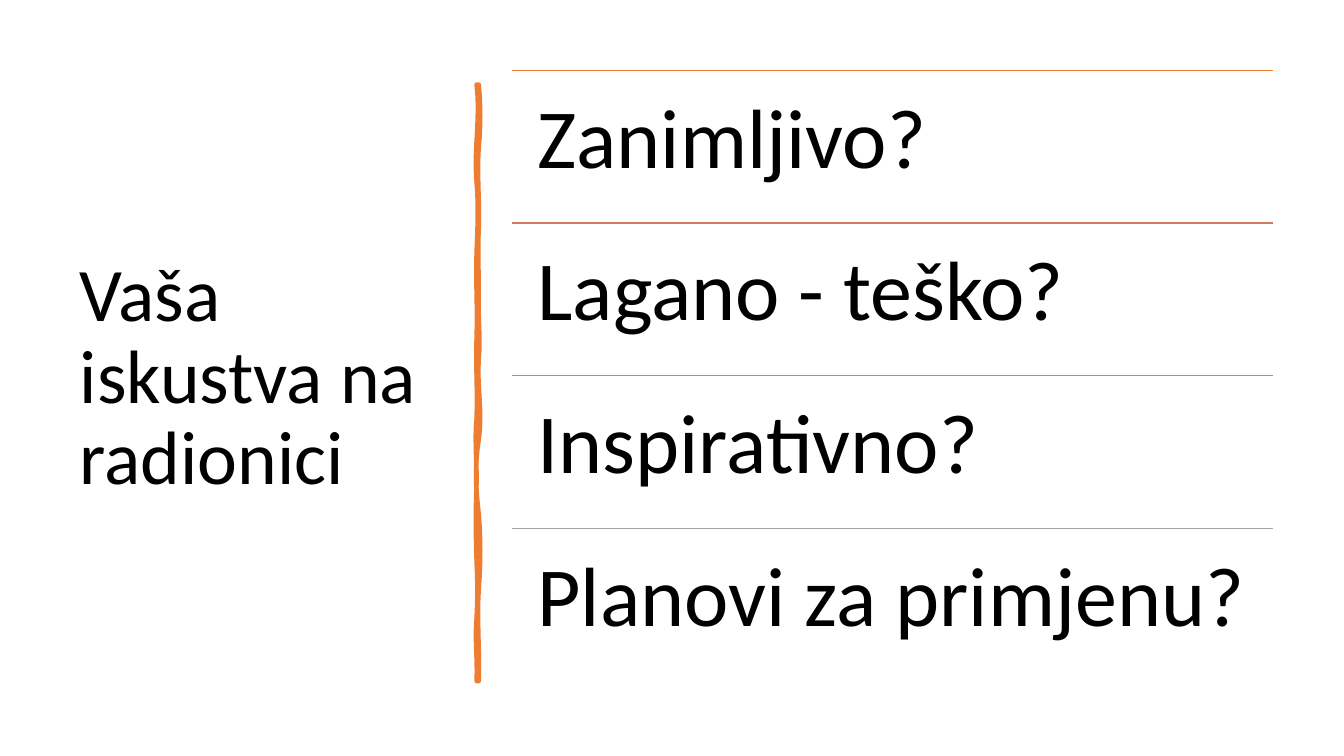
import pptx
import pptx.util
import pptx.dml.color
import pptx.enum.shapes
import pptx.enum.text
import lxml.etree
from pptx.oxml.ns import qn

Pt = pptx.util.Pt
Anchor = pptx.enum.text.MSO_ANCHOR

COLORS = {
    "background": "FFFFFF",
    "text": "000000",
    "ribbon": "ED7D31",
    "rule_1": "ED7D31",
    "rule_2": "D17B5C",
    "rule_3": "B98A82",
    "rule_4": "A5A5A5",
}
QUESTIONS = ["Zanimljivo?", "Lagano - teško?", "Inspirativno?", "Planovi za primjenu?"]

# Ribbon edges: (end of the wave, sway near its start, sway near its end)
RIGHT_EDGE = [(44.6, 1.4, 1.4), (102.2, -1.4, 0.7), (151.2, -0.7, 0), (195.8, -0.7, 1.4),
              (253.4, -1.4, 2.9), (306.7, -2.9, -2.2), (360, 1.4, 1.4), (426, -1.4, 0.7)]
LEFT_EDGE = [(380.9, 0.7, -1.4), (340.6, 0.7, 0.7), (283, -0.7, -0.7), (238.3, 0, -1.4),
             (180.7, 0.7, -0.7), (119.5, 0.7, -0.7), (69.8, 0.7, 1.4), (0, -2.2, 2.9)]


def rgb(name):
    return pptx.dml.color.RGBColor.from_string(COLORS[name])


def add_text(slide, text, box, size, font="Calibri", color="text",
             anchor=Anchor.TOP, inset_x=7.2, inset_y=3.6):
    frame = slide.shapes.add_textbox(*map(Pt, box)).text_frame
    frame.word_wrap = True
    frame.vertical_anchor = anchor
    frame.margin_left = frame.margin_right = Pt(inset_x)
    frame.margin_top = frame.margin_bottom = Pt(inset_y)
    paragraph = frame.paragraphs[0]
    paragraph.line_spacing = 0.9
    run = paragraph.add_run()
    run.text = text
    run.font.name = font
    run.font.size = Pt(size)
    run.font.color.rgb = rgb(color)


def add_rule(slide, left, top, width, color):
    rule = slide.shapes.add_connector(
        pptx.enum.shapes.MSO_CONNECTOR.STRAIGHT, Pt(left), Pt(top), Pt(left + width), Pt(top))
    rule.line.color.rgb = rgb(color)
    rule.line.width = Pt(1)
    lxml.etree.SubElement(rule._element.spPr, qn("a:effectLst"))


def wavy_edge(x, start, waves, steps=8):
    """Points along a vertical edge that sways around x."""
    points = []
    for end, sway_in, sway_out in waves:
        for step in range(1, steps + 1):
            t = step / steps
            sway = 3 * t * (1 - t) * ((1 - t) * sway_in + t * sway_out)
            points.append((x + sway, start + t * (end - start)))
        start = end
    return points


def add_ribbon(slide, box):
    left, top, width, height = box
    outline = wavy_edge(left + width, 0, RIGHT_EDGE)
    outline += [(left, height)] + wavy_edge(left, height, LEFT_EDGE)
    builder = slide.shapes.build_freeform(Pt(left + width), Pt(top))
    builder.add_line_segments([(Pt(x), Pt(top + y)) for x, y in outline], close=True)
    ribbon = builder.convert_to_shape()
    ribbon.shadow.inherit = False
    ribbon.fill.solid()
    ribbon.fill.fore_color.rgb = rgb("ribbon")
    ribbon.line.color.rgb = rgb("ribbon")
    ribbon.line.width = Pt(3.25)
    # Round joins keep the ends of the ribbon soft
    lxml.etree.SubElement(ribbon.line._get_or_add_ln(), qn("a:round"))


def add_questions(slide, box):
    left, top, width, height = box
    row_height = height / len(QUESTIONS)
    for index, question in enumerate(QUESTIONS):
        row_top = top + index * row_height
        add_rule(slide, left, row_top, width, f"rule_{index + 1}")
        add_text(slide, question, (left, row_top, width, row_height), 60,
                 inset_x=18, inset_y=18)


def main():
    deck = pptx.Presentation()
    deck.slide_width, deck.slide_height = Pt(960), Pt(540)
    slide = deck.slides.add_slide(deck.slide_layouts[6])
    slide.background.fill.solid()
    slide.background.fill.fore_color.rgb = rgb("background")

    # Title on the left
    add_text(slide, "Vaša iskustva na radionici", (50, 50.4, 269, 440), 54,
             anchor=Anchor.MIDDLE)
    # Hand-drawn divider
    add_ribbon(slide, (340.5, 60.5, 1.5, 426))
    # Ruled list of questions
    add_questions(slide, (366, 50.4, 543.5, 436))

    deck.save("out.pptx")


if __name__ == "__main__":
    main()
